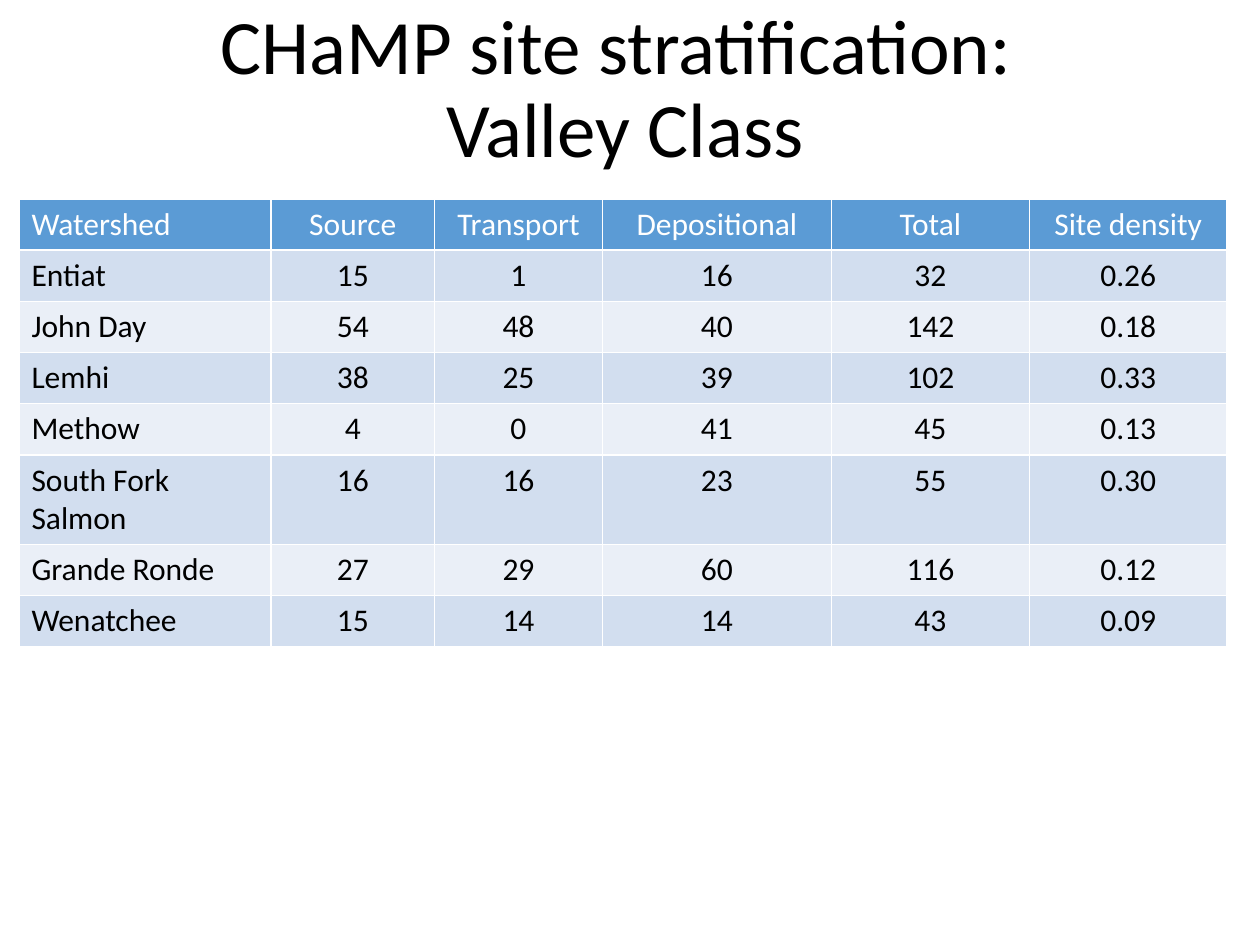
from lxml.etree import SubElement
from pptx import Presentation
from pptx.dml.color import RGBColor
from pptx.enum.text import MSO_ANCHOR, PP_ALIGN
from pptx.oxml.ns import qn
from pptx.util import Inches, Pt

FONT = "Calibri"
HEADER, BANDS = "5B9BD5", ("EAEFF7", "D2DEEF")
WHITE, BLACK = "FFFFFF", "000000"


def style(p, size, color, align):
    p.alignment = align
    p.font.name, p.font.size, p.font.bold = FONT, Pt(size), False
    p.font.color.rgb = RGBColor.from_string(color)


def add_borders(cell, color, width):
    tcPr = cell._tc.get_or_add_tcPr()
    for side in ("lnL", "lnR", "lnT", "lnB"):
        ln = SubElement(tcPr, qn("a:" + side), w=str(Pt(width)))
        fill = SubElement(ln, qn("a:solidFill"))
        SubElement(fill, qn("a:srgbClr"), val=color)


prs = Presentation()
prs.slide_width, prs.slide_height = Inches(10), Inches(7.5)
s = prs.slides.add_slide(prs.slide_layouts[5])

# Title
title = s.shapes.title
title.left, title.top = Inches(0.65), Inches(0)
title.width, title.height = Inches(8.62), Inches(1.45)
tf = title.text_frame
tf.word_wrap = True
tf.vertical_anchor = MSO_ANCHOR.MIDDLE
tf.text = "CHaMP site stratification: \vValley Class"
p = tf.paragraphs[0]
p.line_spacing = 0.9
style(p, 44, BLACK, PP_ALIGN.CENTER)

# Sites per watershed and valley class
rows = [
    ("Watershed", "Source", "Transport", "Depositional", "Total", "Site density"),
    ("Entiat", "15", "1", "16", "32", "0.26"),
    ("John Day", "54", "48", "40", "142", "0.18"),
    ("Lemhi", "38", "25", "39", "102", "0.33"),
    ("Methow", "4", "0", "41", "45", "0.13"),
    ("South Fork Salmon", "16", "16", "23", "55", "0.30"),
    ("Grande Ronde", "27", "29", "60", "116", "0.12"),
    ("Wenatchee", "15", "14", "14", "43", "0.09"),
]
widths = [2, 1.3, 1.33, 1.82, 1.57, 1.57]
table = s.shapes.add_table(len(rows), len(widths), Inches(0.15), Inches(1.58),
                           Inches(sum(widths)), Inches(3.25)).table
for column, width in zip(table.columns, widths):
    column.width = Inches(width)

for i, row in enumerate(rows):
    for j, text in enumerate(row):
        cell = table.cell(i, j)
        cell.text = text
        style(cell.text_frame.paragraphs[0], 18, BLACK if i else WHITE,
              PP_ALIGN.CENTER if j else PP_ALIGN.LEFT)
        add_borders(cell, WHITE, 1)
        cell.fill.solid()
        cell.fill.fore_color.rgb = RGBColor.from_string(BANDS[i % 2] if i else HEADER)

prs.save("out.pptx")
